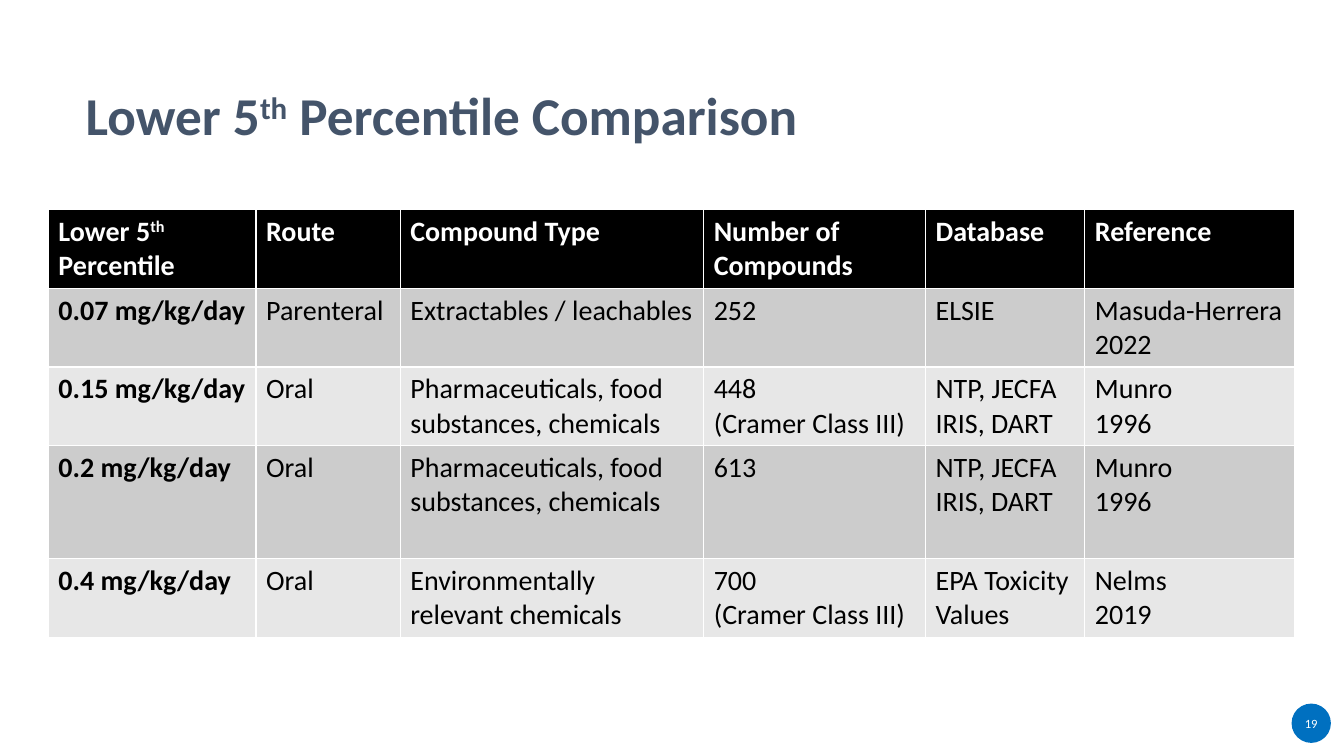
from dataclasses import dataclass

from pptx import Presentation
from pptx import util as u
from pptx.dml.color import RGBColor
from pptx.enum import shapes, text


@dataclass(frozen=True)
class Theme:
    font: str = "Calibri"
    title_size: int = 38
    table_size: int = 20
    number_size: int = 9
    title: str = "44546A"
    header: str = "000000"
    body: str = "000000"
    light: str = "FFFFFF"
    bands: tuple = ("CCCCCC", "E7E7E7")
    badge: str = "0070C0"


THEME = Theme()
TITLE = "Lower 5^th^ Percentile Comparison"
COLUMN_WIDTHS = (2.06, 1.43, 3.01, 2.2, 1.58, 2.08)
ROW_HEIGHTS = (0.78, 0.78, 0.78, 1.12, 0.78)
ROWS = (
    ("Lower 5^th^ Percentile", "Route", "Compound Type",
     "Number of Compounds", "Database", "Reference"),
    ("0.07 mg/kg/day", "Parenteral", "Extractables / leachables",
     "252", "ELSIE", "Masuda-Herrera 2022"),
    ("0.15 mg/kg/day", "Oral", "Pharmaceuticals, food substances, chemicals",
     "448 \v(Cramer Class III)", "NTP, JECFA IRIS, DART", "Munro \v1996"),
    ("0.2 mg/kg/day", "Oral", "Pharmaceuticals, food substances, chemicals",
     "613", "NTP, JECFA IRIS, DART", "Munro \v1996"),
    ("0.4 mg/kg/day", "Oral", "Environmentally relevant chemicals",
     "700 \v(Cramer Class III)", "EPA Toxicity Values", "Nelms \v2019"),
)


def set_fill(fill, color):
    fill.solid()
    fill.fore_color.rgb = RGBColor.from_string(color)


def write(paragraph, content, size, color, bold=False):
    """Write content into the paragraph; parts between carets are superscript."""
    if "^" in content:
        for index, part in enumerate(content.split("^")):
            run = paragraph.add_run()
            run.text = part
            if index % 2:
                run.font._element.set("baseline", "30000")
    else:
        paragraph.text = content
    for run in paragraph.runs:
        run.font.name = THEME.font
        run.font.size = u.Pt(size)
        run.font.bold = bold
        run.font.color.rgb = RGBColor.from_string(color)


def add_title(slide):
    title = slide.shapes.title
    title.left, title.top = u.Inches(0.85), u.Inches(0.84)
    title.width, title.height = u.Inches(11.31), u.Inches(0.71)
    frame = title.text_frame
    frame.margin_left = 0
    frame.auto_size = text.MSO_AUTO_SIZE.NONE
    frame.vertical_anchor = text.MSO_ANCHOR.TOP
    paragraph = frame.paragraphs[0]
    paragraph.alignment = text.PP_ALIGN.LEFT
    paragraph.line_spacing = 0.9
    write(paragraph, TITLE, THEME.title_size, THEME.title, bold=True)


def add_comparison_table(slide):
    table = slide.shapes.add_table(
        len(ROWS), len(COLUMN_WIDTHS), u.Inches(0.48), u.Inches(2.08),
        u.Inches(sum(COLUMN_WIDTHS)), u.Inches(sum(ROW_HEIGHTS))).table
    for column, width in zip(table.columns, COLUMN_WIDTHS):
        column.width = u.Inches(width)
    for row, height in zip(table.rows, ROW_HEIGHTS):
        row.height = u.Inches(height)
    for row_index, row in enumerate(ROWS):
        is_header = row_index == 0
        fill = THEME.header if is_header else THEME.bands[(row_index - 1) % 2]
        color = THEME.light if is_header else THEME.body
        for column_index, content in enumerate(row):
            cell = table.cell(row_index, column_index)
            set_fill(cell.fill, fill)
            write(cell.text_frame.paragraphs[0], content, THEME.table_size,
                  color, bold=is_header or column_index == 0)


def add_slide_number(slide, number):
    badge = slide.shapes.add_shape(
        shapes.MSO_SHAPE.OVAL, u.Inches(12.81), u.Inches(6.98),
        u.Inches(0.39), u.Inches(0.39))
    badge.shadow.inherit = False
    set_fill(badge.fill, THEME.badge)
    badge.line.fill.background()
    frame = badge.text_frame
    frame.margin_left = frame.margin_right = 0
    frame.margin_top = frame.margin_bottom = 0
    frame.vertical_anchor = text.MSO_ANCHOR.MIDDLE
    paragraph = frame.paragraphs[0]
    paragraph.alignment = text.PP_ALIGN.CENTER
    write(paragraph, number, THEME.number_size, THEME.light)


def main():
    presentation = Presentation()
    presentation.slide_width = u.Inches(13.33)
    presentation.slide_height = u.Inches(7.5)
    slide = presentation.slides.add_slide(presentation.slide_layouts[5])
    add_title(slide)
    add_comparison_table(slide)
    add_slide_number(slide, "19")
    presentation.save("out.pptx")


if __name__ == "__main__":
    main()
